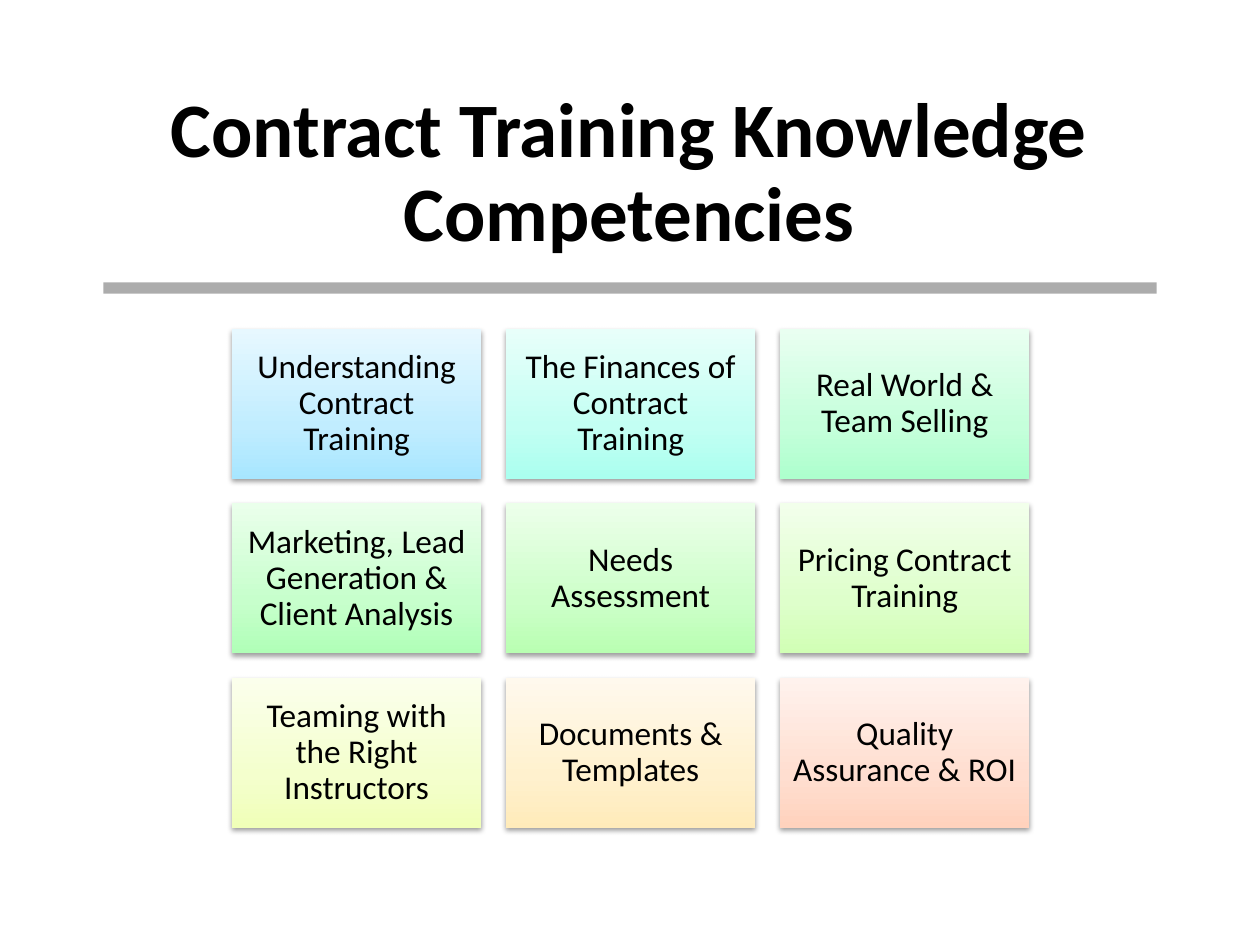
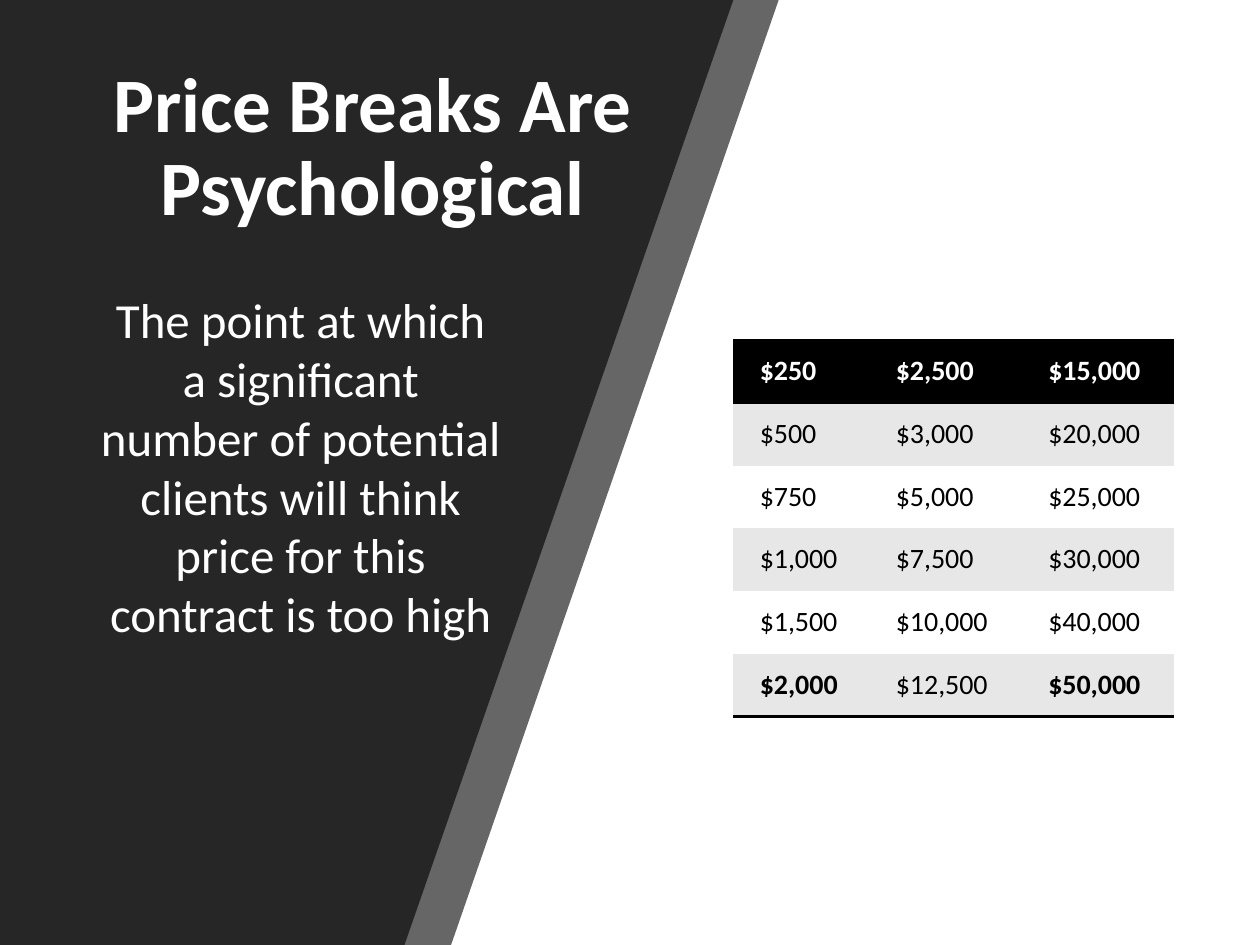
import copy

import lxml.etree
import pptx
import pptx.dml.color
import pptx.enum.shapes
import pptx.enum.text
import pptx.oxml
import pptx.oxml.ns
import pptx.util

Inches = pptx.util.Inches
Pt = pptx.util.Pt
qn = pptx.oxml.ns.qn
ALIGN = pptx.enum.text.PP_ALIGN
ANCHOR = pptx.enum.text.MSO_ANCHOR

COLOURS = {
    "black": "000000",
    "white": "FFFFFF",
    "charcoal": "262626",
    "grey": "808080",
    "stripe": "E7E7E7",
}
FONT = "Calibri"
NO_GRID_STYLE = "{2D5ABB26-0587-4C30-8999-92F81FD0307C}"

# Each competency: label, then gradient colours from bottom to top
COMPETENCIES = [
    ("Understanding Contract Training", "A7E6FF", "C1EDFF", "E7F8FF"),
    ("The Finances of Contract Training", "AAFFEF", "C3FFF3", "E8FFFA"),
    ("Real World & Team Selling", "ADFFCD", "C5FFDB", "E9FFF1"),
    ("Marketing, Lead Generation & Client Analysis", "B0FFB7", "C7FFCC", "EAFFEB"),
    ("Needs Assessment", "B9FFB2", "CDFFC9", "ECFFEA"),
    ("Pricing Contract Training", "D1FFB5", "DEFFCB", "F2FFEB"),
    ("Teaming with the Right Instructors", "F0FFB8", "F4FFCD", "FBFFEC"),
    ("Documents & Templates", "FFEBBA", "FFF1CE", "FFF9ED"),
    ("Quality Assurance & ROI", "FFD2BD", "FFDED0", "FFF2ED"),
]

PRICE_BREAKS = [
    ("$250", "$2,500", "$15,000"),
    ("$500", "$3,000", "$20,000"),
    ("$750", "$5,000", "$25,000"),
    ("$1,000", "$7,500", "$30,000"),
    ("$1,500", "$10,000", "$40,000"),
    ("$2,000", "$12,500", "$50,000"),
]
BOLD_PRICES = {*PRICE_BREAKS[0], "$2,000", "$50,000"}


def rgb(colour):
    return pptx.dml.color.RGBColor.from_string(COLOURS.get(colour, colour))


def add_xml(parent, tag, **attributes):
    return lxml.etree.SubElement(parent, qn(tag), attributes)


class SlideBuilder:
    """Holds the deck, its style and the current slide."""

    def __init__(self):
        self.deck = pptx.Presentation()
        self.deck.slide_width = Inches(10)
        self.deck.slide_height = Inches(7.5)
        self.page = None

    def new_page(self, background):
        self.page = self.deck.slides.add_slide(self.deck.slide_layouts[6])
        fill = self.page.background.fill
        fill.solid()
        fill.fore_color.rgb = rgb(background)

    def set_text(self, frame, words, size, colour="black", bold=False,
                 align=ALIGN.CENTER, spacing=None):
        frame.word_wrap = True
        para = frame.paragraphs[0]
        para.text = words
        para.alignment = align
        if spacing:
            para.line_spacing = spacing
        para.font.name = FONT
        para.font.size = Pt(size)
        para.font.bold = bold
        para.font.color.rgb = rgb(colour)

    def text(self, words, left, top, width, height, size, colour,
             anchor=ANCHOR.TOP, **style):
        box = self.page.shapes.add_textbox(
            Inches(left), Inches(top), Inches(width), Inches(height))
        box.text_frame.vertical_anchor = anchor
        self.set_text(box.text_frame, words, size, colour, **style)

    def title(self, words, left, top, width, colour):
        self.text(words, left, top, width, 1.45, 44, colour,
                  ANCHOR.MIDDLE, bold=True, spacing=0.9)

    def paint(self, shape, colour, opacity=100):
        shape.shadow.inherit = False
        shape.line.fill.background()
        shape.fill.solid()
        shape.fill.fore_color.rgb = rgb(colour)
        if opacity < 100:
            solid = shape._element.spPr.find(qn("a:solidFill"))
            add_xml(solid[0], "a:alpha", val=str(opacity * 1000))

    def rectangle(self, left, top, width, height):
        return self.page.shapes.add_shape(
            pptx.enum.shapes.MSO_SHAPE.RECTANGLE,
            Inches(left), Inches(top), Inches(width), Inches(height))

    def band(self, left, top, width, height, colour, opacity=100):
        self.paint(self.rectangle(left, top, width, height), colour, opacity)

    def slanted_panel(self, top_right, bottom_right, colour, opacity=100):
        outline = self.page.shapes.build_freeform(Inches(top_right), 0)
        outline.add_line_segments(
            [(0, 0), (0, Inches(7.5)), (Inches(bottom_right), Inches(7.5))],
            close=True)
        self.paint(outline.convert_to_shape(), colour, opacity)

    def tile(self, words, gradient, left, top, width, height):
        box = self.rectangle(left, top, width, height)
        box.line.fill.background()
        # Three-stop gradient running upwards
        box.fill.gradient()
        box.fill.gradient_angle = 90
        stop_list = box._element.spPr.find(qn("a:gradFill")).find(qn("a:gsLst"))
        stop_list.append(copy.deepcopy(stop_list[0]))
        for stop, place, colour in zip(box.fill.gradient_stops, (0, 0.35, 1), gradient):
            stop.position = place
            stop.color.rgb = rgb(colour)
        # Soft shadow below
        box.shadow.inherit = False
        effects = box._element.spPr.find(qn("a:effectLst"))
        shadow = add_xml(effects, "a:outerShdw", blurRad=str(Pt(3.1)),
                         dist=str(Pt(1.6)), dir="5400000", rotWithShape="0")
        shade = add_xml(shadow, "a:srgbClr", val=COLOURS["black"])
        add_xml(shade, "a:alpha", val="38000")
        # Label
        frame = box.text_frame
        frame.vertical_anchor = ANCHOR.MIDDLE
        frame.margin_left = frame.margin_right = Inches(0.08)
        frame.margin_top = frame.margin_bottom = Inches(0.08)
        self.set_text(frame, words, 19, spacing=0.9)

    def cell_borders(self, cell, sides):
        properties = cell._tc.get_or_add_tcPr()
        for place, side in enumerate(sides):
            line = add_xml(properties, "a:ln" + side, w=str(Pt(2)))
            fill = add_xml(line, "a:solidFill")
            add_xml(fill, "a:srgbClr", val=COLOURS["black"])
            properties.insert(place, line)

    def table(self, rows, left, top, widths, height):
        frame = self.page.shapes.add_table(
            len(rows), len(widths), Inches(left), Inches(top),
            Inches(sum(widths)), Inches(height))
        grid = frame.table
        grid.first_row = grid.horz_banding = False
        grid._tbl.tblPr.find(qn("a:tableStyleId")).text = NO_GRID_STYLE
        for column, width in zip(grid.columns, widths):
            column.width = Inches(width)
        last = len(rows) - 1
        for row, prices in enumerate(rows):
            header = row == 0
            stripe = "black" if header else "stripe" if row % 2 else "white"
            for column, price in enumerate(prices):
                cell = grid.cell(row, column)
                cell.margin_left = Inches(0.21)
                cell.margin_right = Inches(0.11)
                cell.margin_top = cell.margin_bottom = Inches(0.11)
                cell.fill.solid()
                cell.fill.fore_color.rgb = rgb(stripe)
                self.set_text(cell.text_frame, price, 16,
                              "white" if header else "black",
                              price in BOLD_PRICES, ALIGN.LEFT)
                if header:
                    self.cell_borders(cell, "TB")
                elif row == last:
                    self.cell_borders(cell, "B")


def build_competencies(builder):
    builder.new_page("white")
    builder.title("Contract Training Knowledge Competencies", 0.71, 0.66, 8.57, "black")
    builder.band(0.82, 2.24, 8.36, 0.09, "grey", 65)

    # Three by three grid with equal gaps
    columns, width, height = 3, 1.98, 1.19
    gap = (6.33 - columns * width) / (columns - 1)
    for index, (label, *gradient) in enumerate(COMPETENCIES):
        row, column = divmod(index, columns)
        builder.tile(label, gradient, 1.84 + column * (width + gap),
                     2.61 + row * (height + gap), width, height)


def build_price_breaks(builder):
    builder.new_page("black")

    # White ground and slanted dark panels
    builder.band(0, 0, 10, 7.5, "white")
    builder.slanted_panel(6.18, 3.58, "charcoal", 70)
    builder.slanted_panel(5.82, 3.21, "charcoal")

    # Message and prices
    builder.title("Price Breaks Are Psychological", 0.69, 0.46, 4.54, "white")
    builder.text("The point at which a significant number of potential clients "
                 "will think price for this contract is too high",
                 0.69, 2.25, 3.39, 3.47, 28, "white")
    builder.table(PRICE_BREAKS, 5.82, 2.7, (1.08, 1.21, 1.21), 2.99)


def main():
    builder = SlideBuilder()
    build_competencies(builder)
    build_price_breaks(builder)
    builder.deck.save("out.pptx")


if __name__ == "__main__":
    main()
